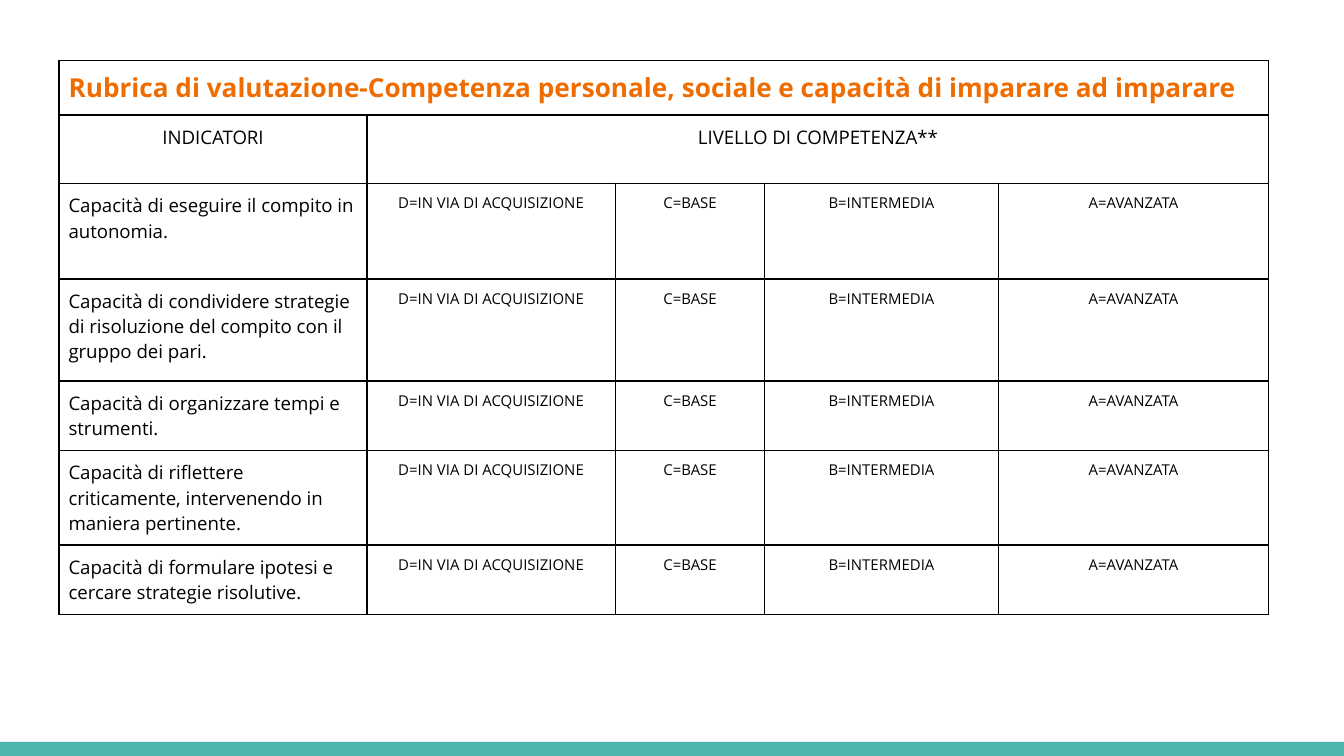
from lxml.etree import SubElement
from pptx import Presentation
from pptx.dml.color import RGBColor
from pptx.enum.shapes import MSO_SHAPE as Shape
from pptx.enum.text import PP_ALIGN as Align
from pptx.oxml.ns import qn
from pptx.util import Inches, Pt

COLORS = {"title": "EF6C00", "text": "000000", "border": "000000", "footer": "4DB6AC"}
FONT = "Open Sans"
COLUMN_WIDTHS = [2.29, 1.85, 1.11, 1.74, 2.01]
ROW_HEIGHTS = [0.23, 0.51, 0.71, 0.76, 0.49, 0.63, 0.49]
TITLE = "Rubrica di valutazione-Competenza personale, sociale e capacità di imparare ad imparare"
INDICATORS = [
    "Capacità di eseguire il compito in autonomia.",
    "Capacità di condividere strategie di risoluzione del compito con il gruppo dei pari.",
    "Capacità di organizzare tempi e strumenti.",
    "Capacità di riflettere criticamente, intervenendo in maniera pertinente.",
    "Capacità di formulare ipotesi e cercare strategie risolutive.",
]
LEVELS = ["D=IN VIA DI ACQUISIZIONE", "C=BASE", "B=INTERMEDIA", "A=AVANZATA"]


def add_footer_bar(slide):
    bar = slide.shapes.add_shape(
        Shape.RECTANGLE, Inches(0), Inches(5.52), Inches(10), Inches(0.11))
    bar.shadow.inherit = False
    bar.fill.solid()
    bar.fill.fore_color.rgb = RGBColor.from_string(COLORS["footer"])
    bar.line.fill.background()


def style_cell(cell):
    properties = cell._tc.get_or_add_tcPr()
    for side in ("lnL", "lnR", "lnT", "lnB"):
        line = SubElement(properties, qn(f"a:{side}"), w=str(Pt(1)))
        fill = SubElement(line, qn("a:solidFill"))
        SubElement(fill, qn("a:srgbClr"), val=COLORS["border"])
    cell.fill.background()
    cell.margin_left = cell.margin_right = Inches(0.07)
    cell.margin_top = cell.margin_bottom = Inches(0.07)


def write_cell(cell, text, size, align=Align.CENTER, color="text", bold=False):
    cell.text = text
    paragraph = cell.text_frame.paragraphs[0]
    paragraph.alignment = align
    font = paragraph.font
    font.name = FONT
    font.size = Pt(size)
    font.bold = bold
    font.color.rgb = RGBColor.from_string(COLORS[color])


def add_rubric_table(slide):
    table = slide.shapes.add_table(
        len(ROW_HEIGHTS), len(COLUMN_WIDTHS), Inches(0.44), Inches(0.45),
        Inches(sum(COLUMN_WIDTHS)), Inches(sum(ROW_HEIGHTS))).table
    table.first_row = table.horz_banding = False
    for column, width in zip(table.columns, COLUMN_WIDTHS):
        column.width = Inches(width)
    for row, height in zip(table.rows, ROW_HEIGHTS):
        row.height = Inches(height)
        for cell in row.cells:
            style_cell(cell)
    table.cell(0, 0).merge(table.cell(0, 4))
    table.cell(1, 1).merge(table.cell(1, 4))
    return table


def fill_rubric(table):
    write_cell(table.cell(0, 0), TITLE, 14, Align.LEFT, "title", True)
    write_cell(table.cell(1, 0), "INDICATORI", 10)
    write_cell(table.cell(1, 1), "LIVELLO DI COMPETENZA**", 10)
    for row, indicator in enumerate(INDICATORS, start=2):
        write_cell(table.cell(row, 0), indicator, 10, Align.LEFT)
        for column, level in enumerate(LEVELS, start=1):
            write_cell(table.cell(row, column), level, 8)


def main():
    presentation = Presentation()
    presentation.slide_width = Inches(10)
    presentation.slide_height = Inches(10) * 9 // 16
    slide = presentation.slides.add_slide(presentation.slide_layouts[6])
    add_footer_bar(slide)
    fill_rubric(add_rubric_table(slide))
    presentation.save("out.pptx")


if __name__ == "__main__":
    main()
